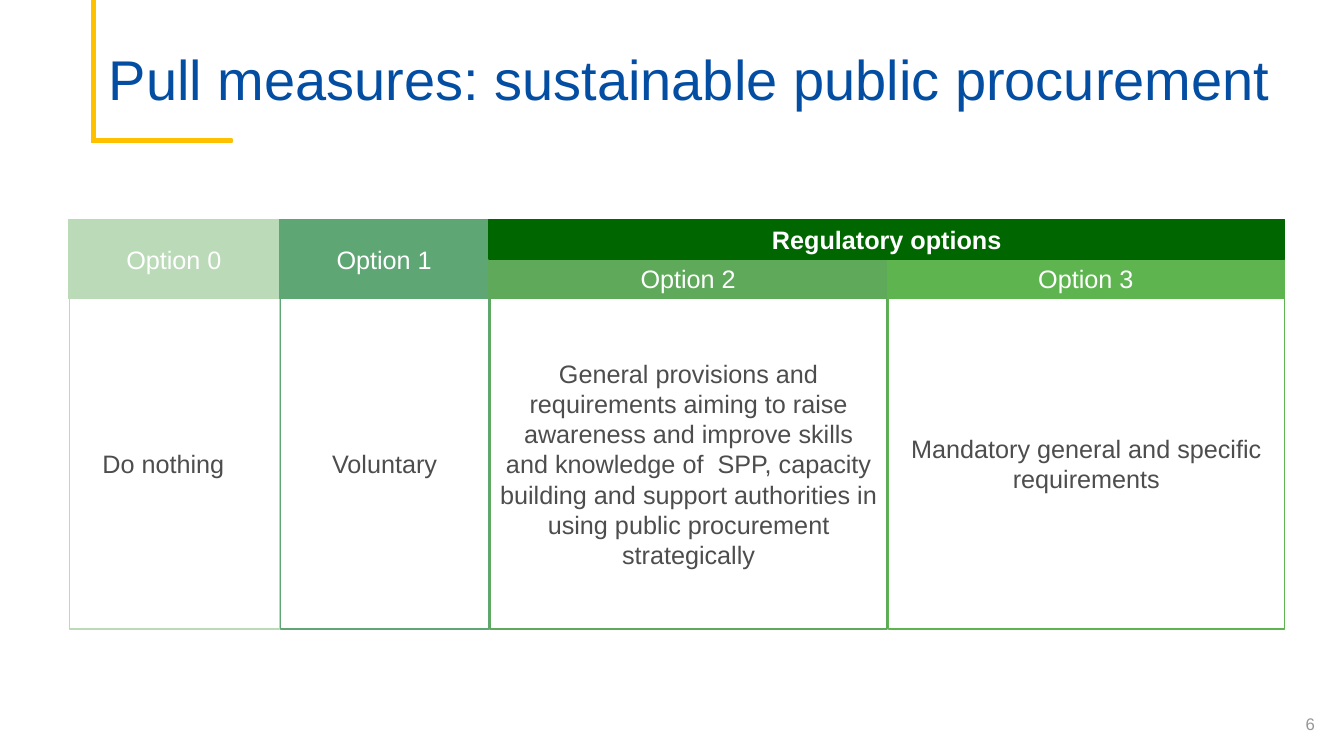
from pptx import Presentation
from pptx.dml.color import RGBColor
from pptx.enum.shapes import MSO_SHAPE
from pptx.enum.text import MSO_ANCHOR, MSO_AUTO_SIZE, PP_ALIGN
from pptx.util import Inches, Pt

RECT = MSO_SHAPE.RECTANGLE
MIDDLE = MSO_ANCHOR.MIDDLE
CENTER, LEFT = PP_ALIGN.CENTER, PP_ALIGN.LEFT
NO_FIT = MSO_AUTO_SIZE.NONE

COLORS = {
    "title": "034EA2", "accent": "FFC000", "text": "4D4D4D",
    "white": "FFFFFF", "number": "979797", "regulatory": "006600",
    "option 0": "BADAB8", "option 1": "5EA674",
    "option 2": "5FA95B", "option 3": "5EB54F",
}
COLS = [0.68, 2.77, 4.85, 8.8, 12.74]
ROWS = [2.18, 2.57, 2.96, 6.24]


def write(sp, text, size, color, align, bold=False):
    tf = sp.text_frame
    for name, value in {"word_wrap": True, "auto_size": NO_FIT,
                        "vertical_anchor": MIDDLE}.items():
        setattr(tf, name, value)
    p = tf.paragraphs[0]
    p.alignment = align
    r = p.add_run()
    r.text = text
    for name, value in {"name": "Arial", "size": Pt(size), "bold": bold}.items():
        setattr(r.font, name, value)
    r.font.color.rgb = RGBColor.from_string(COLORS[color])


def add_box(left, top, right, bottom, line, filled=True):
    """Draw a rectangle between four edges given in inches."""
    sp = slide.shapes.add_shape(RECT, Inches(left), Inches(top),
                                Inches(right - left), Inches(bottom - top))
    sp.shadow.inherit = False
    rgb = RGBColor.from_string(COLORS[line])
    if filled:
        sp.fill.solid()
        sp.fill.fore_color.rgb = rgb
    else:
        sp.fill.background()
    sp.line.color.rgb = rgb
    sp.line.width = Pt(1)
    return sp


prs = Presentation()
prs.slide_width, prs.slide_height = Inches(13.33), Inches(7.5)
slide = prs.slides.add_slide(prs.slide_layouts[5])

# Corner bracket beside the title
for edges in [(0.91, 0, 0.95, 1.41), (0.91, 1.38, 2.3, 1.41)]:
    add_box(*edges, "accent")

title = slide.shapes.title
title.left, title.top = Inches(0.98), Inches(0.22)
title.width, title.height = Inches(11.95), Inches(1.15)
write(title, "Pull measures: sustainable public procurement", 40, "title", LEFT)
title.text_frame.margin_bottom = 0
title.text_frame.paragraphs[0].line_spacing = 0.9

# Options: heading row at which the header starts, and the measure below it
options = [
    (0, "Do nothing"),
    (0, "Voluntary"),
    (1, "General provisions and requirements aiming to raise awareness and "
        "improve skills and knowledge of \u00a0SPP, capacity building and support "
        "authorities in using public procurement strategically"),
    (1, "Mandatory general and specific requirements"),
]
measures = []
for i, (row, measure) in enumerate(options):
    left, right = COLS[i], COLS[i + 1]
    header = add_box(left, ROWS[row], right, ROWS[2], f"option {i}")
    write(header, f"Option {i}", 18, "white", CENTER)
    body = add_box(left + 0.01, ROWS[2], right, ROWS[3], f"option {i}", filled=False)
    write(body, measure, 18, "text", CENTER)
    measures.append(body)
measures[0].text_frame.margin_right = Inches(0.32)

regulatory = add_box(COLS[2], ROWS[0], COLS[4], ROWS[1], "regulatory")
write(regulatory, "Regulatory options", 18, "white", CENTER, bold=True)

number = slide.shapes.add_textbox(Inches(12.85), Inches(6.98), Inches(0.29), Inches(0.4))
write(number, "6", 12, "number", LEFT)

prs.save("out.pptx")
